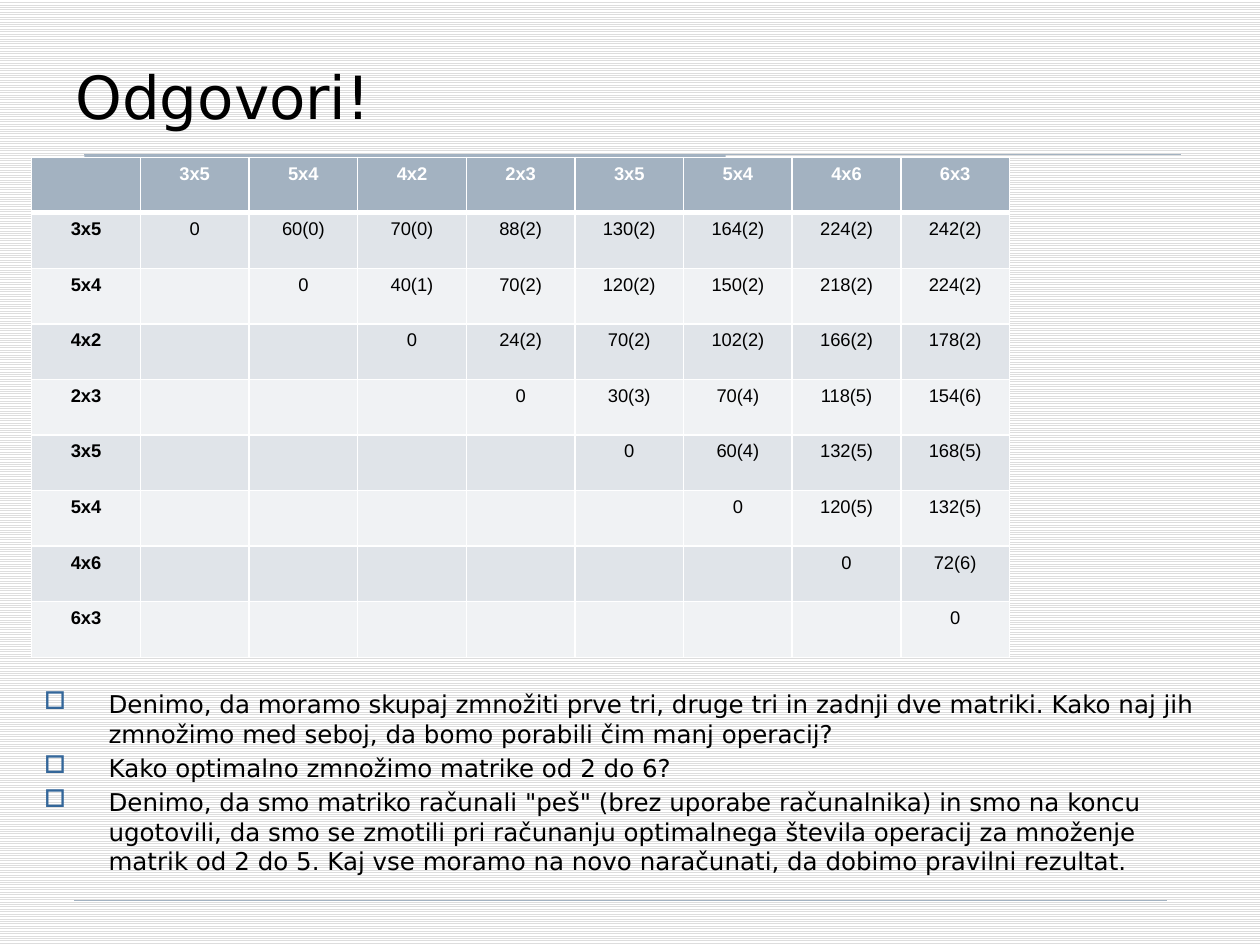
"""Build the matrix chain multiplication quiz slide."""
from lxml.etree import SubElement
from pptx import Presentation
from pptx.dml.color import RGBColor
from pptx.enum.dml import MSO_PATTERN
from pptx.enum.shapes import MSO_CONNECTOR, MSO_SHAPE
from pptx.enum.text import MSO_ANCHOR, PP_ALIGN
from pptx.oxml.ns import qn
from pptx.util import Cm, Pt

BLACK = RGBColor(0x00, 0x00, 0x00)
WHITE = RGBColor(0xFF, 0xFF, 0xFF)
STRIPE = RGBColor(0xDD, 0xDD, 0xDD)
STEEL = RGBColor(0xA3, 0xB2, 0xC1)
BAND_DARK = RGBColor(0xE0, 0xE4, 0xE9)
BAND_LIGHT = RGBColor(0xF0, 0xF2, 0xF4)
BULLET = RGBColor(0x33, 0x66, 0x99)

MATRICES = ["3x5", "5x4", "4x2", "2x3", "3x5", "5x4", "4x6", "6x3"]
COSTS = [
    ["0", "60(0)", "70(0)", "88(2)", "130(2)", "164(2)", "224(2)", "242(2)"],
    ["0", "40(1)", "70(2)", "120(2)", "150(2)", "218(2)", "224(2)"],
    ["0", "24(2)", "70(2)", "102(2)", "166(2)", "178(2)"],
    ["0", "30(3)", "70(4)", "118(5)", "154(6)"],
    ["0", "60(4)", "132(5)", "168(5)"],
    ["0", "120(5)", "132(5)"],
    ["0", "72(6)"],
    ["0"],
]
QUESTIONS = [
    "Denimo, da moramo skupaj zmnožiti prve tri, druge tri in zadnji dve matriki. "
    "Kako naj jih zmnožimo med seboj, da bomo porabili čim manj operacij?",
    "Kako optimalno zmnožimo matrike od 2 do 6?",
    'Denimo, da smo matriko računali "peš" (brez uporabe računalnika) in smo na koncu '
    "ugotovili, da smo se zmotili pri računanju optimalnega števila operacij za množenje "
    "matrik od 2 do 5. Kaj vse moramo na novo naračunati, da dobimo pravilni rezultat.",
]


def write(paragraph, text, size, font="DejaVu Sans", color=BLACK, bold=False, align=PP_ALIGN.LEFT):
    """Add one formatted run to a paragraph."""
    paragraph.alignment = align
    run = paragraph.add_run()
    run.text = text
    run.font.size = Pt(size)
    run.font.name = font
    run.font.bold = bold
    run.font.color.rgb = color


def add_border(cell, side, width):
    """Draw one white edge of a table cell."""
    edge = SubElement(cell._tc.get_or_add_tcPr(), qn(f"a:ln{side}"), w=str(Pt(width)))
    fill = SubElement(edge, qn("a:solidFill"))
    SubElement(fill, qn("a:srgbClr"), val=str(WHITE))


prs = Presentation()
prs.slide_width, prs.slide_height = Cm(25.4), Cm(19.05)
slide = prs.slides.add_slide(prs.slide_layouts[5])
backdrop = slide.background.fill
backdrop.patterned()
backdrop.pattern = MSO_PATTERN.LIGHT_HORIZONTAL
backdrop.fore_color.rgb = STRIPE
backdrop.back_color.rgb = WHITE

title_bar = slide.shapes.add_shape(MSO_SHAPE.RECTANGLE, Cm(1.7), Cm(3.12), Cm(12.93), Cm(0.3))
title_bar.shadow.inherit = False
title_bar.fill.solid()
title_bar.fill.fore_color.rgb = STEEL
title_bar.line.fill.background()

for left, right, y, width in [(1.7, 23.8, 3.12, 0.75), (1.5, 23.52, 18.14, 0.25)]:
    rule = slide.shapes.add_connector(MSO_CONNECTOR.STRAIGHT, Cm(left), Cm(y), Cm(right), Cm(y))
    rule.line.color.rgb = STEEL
    rule.line.width = Pt(width)
    SubElement(rule._element.spPr, qn("a:effectLst"))

title = slide.shapes.title
title.left, title.top, title.width, title.height = Cm(1.27), Cm(0.76), Cm(22.86), Cm(2.01)
title.text_frame.vertical_anchor = MSO_ANCHOR.BOTTOM
write(title.text_frame.paragraphs[0], "Odgovori!", size=34)

count = len(MATRICES) + 1
grid = [["", *MATRICES]]
for index, (matrix, costs) in enumerate(zip(MATRICES, COSTS)):
    grid.append([matrix, *[""] * index, *costs])

cost_table = slide.shapes.add_table(
    count, count, Cm(0.64), Cm(3.17), Cm(2.19 * count), Cm(1.12 * count)
).table
for r, values in enumerate(grid):
    for c, value in enumerate(values):
        cell = cost_table.cell(r, c)
        for side in "LRTB":
            header_edge = (r == 0 and side == "B") or (r == 1 and side == "T")
            add_border(cell, side, width=3 if header_edge else 1)
        cell.fill.solid()
        cell.fill.fore_color.rgb = STEEL if r == 0 else BAND_DARK if r % 2 else BAND_LIGHT
        if value:
            write(cell.text_frame.paragraphs[0], value, size=10.5, font="Arial",
                  color=WHITE if r == 0 else BLACK, bold=r == 0 or c == 0, align=PP_ALIGN.CENTER)

questions = slide.shapes.add_textbox(Cm(0.64), Cm(13.77), Cm(23.93), Cm(4.24)).text_frame
questions.word_wrap = True
for index, question in enumerate(QUESTIONS):
    paragraph = questions.add_paragraph() if index else questions.paragraphs[0]
    paragraph.space_before = Pt(2.8)
    write(paragraph, question, size=14)
    properties = paragraph._p.get_or_add_pPr()
    properties.set("marL", str(Cm(1.3)))
    properties.set("indent", str(-Cm(1.3)))
    bullet_color = SubElement(properties, qn("a:buClr"))
    SubElement(bullet_color, qn("a:srgbClr"), val=str(BULLET))
    SubElement(properties, qn("a:buChar"), char="□")

prs.save("out.pptx")
